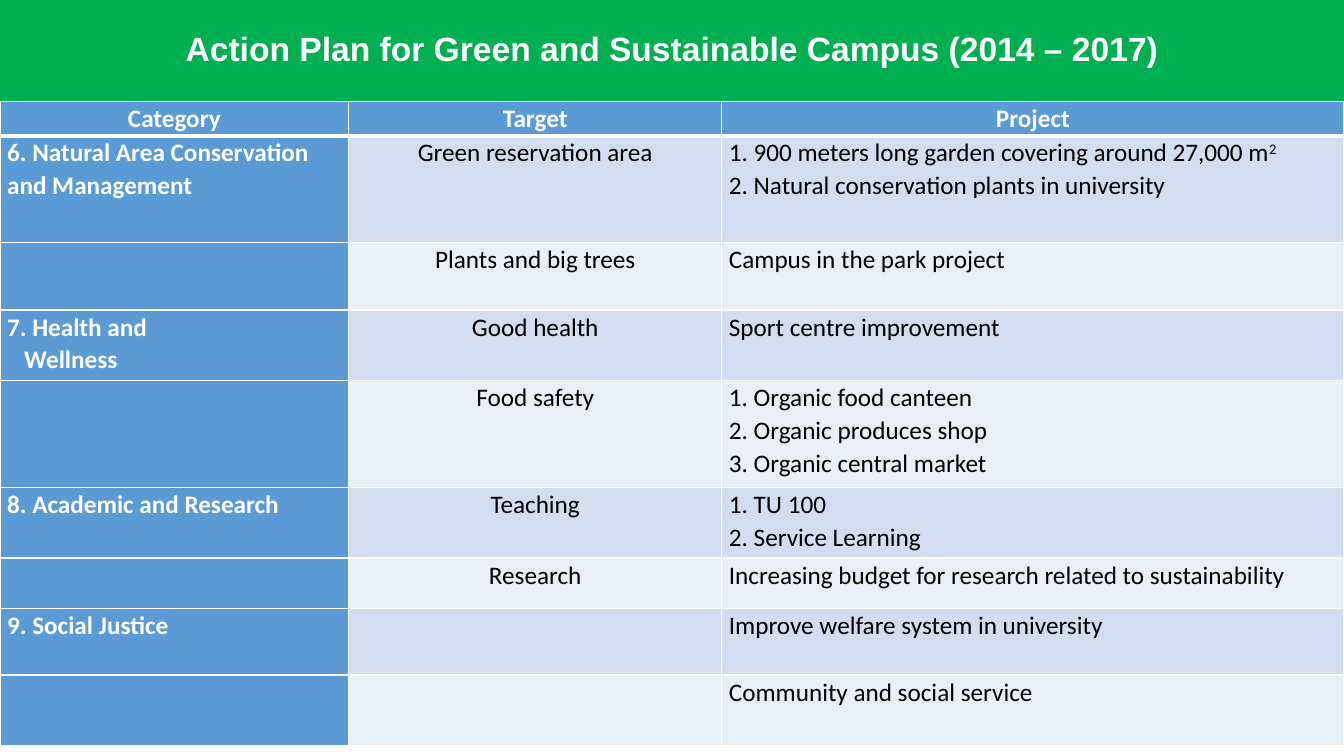
"""Build the action plan slide for a green and sustainable campus."""
import pptx
import pptx.dml.color
import pptx.enum.shapes
import pptx.enum.text
import pptx.oxml.ns
import pptx.util
from lxml import etree

Cm = pptx.util.Cm
Pt = pptx.util.Pt
RGBColor = pptx.dml.color.RGBColor
PP_ALIGN = pptx.enum.text.PP_ALIGN
qn = pptx.oxml.ns.qn

GREEN = RGBColor(0x00, 0xB0, 0x50)
BLUE = RGBColor(0x5B, 0x9B, 0xD5)
BAND_DARK = RGBColor(0xD2, 0xDE, 0xEF)
BAND_LIGHT = RGBColor(0xEA, 0xEF, 0xF7)
WHITE = RGBColor(0xFF, 0xFF, 0xFF)
BLACK = RGBColor(0x00, 0x00, 0x00)

WIDTH, HEIGHT, TITLE_HEIGHT = 33.87, 19.05, 2.56
COLUMNS = [8.79, 9.4, 15.68]
ROW_HEIGHTS = [0.86, 2.69, 1.7, 1.78, 2.69, 1.78, 1.27, 1.68, 1.78]
ROWS = [
    ["Category", "Target", "Project"],
    ["6. Natural Area Conservation and Management", "Green reservation area",
     "1. 900 meters long garden covering around 27,000 m^2\n"
     "2. Natural conservation plants in university"],
    ["", "Plants and big trees", "Campus in the park project"],
    ["7. Health and\n\tWellness", "Good health", "Sport centre improvement"],
    ["", "Food safety",
     "1. Organic food canteen\n2. Organic produces shop\n3. Organic central market"],
    ["8. Academic and Research", "Teaching", "1. TU 100\n2. Service Learning"],
    ["", "Research", "Increasing budget for research related to sustainability"],
    ["9. Social Justice", "", "Improve welfare system in university"],
    ["", "", "Community and social service"],
]


class Deck:
    """Hold the text style and the current slide."""

    title_font = {"name": "Arial", "size": Pt(24), "bold": True}
    cell_font = {"name": "Calibri", "size": Pt(18)}
    cell_margins = {"margin_left": Cm(0.18), "margin_right": Cm(0.18),
                    "margin_top": 0, "margin_bottom": 0}
    indent = Cm(0.43)

    def __init__(self):
        self.prs = pptx.Presentation()
        self.prs.slide_width, self.prs.slide_height = Cm(WIDTH), Cm(HEIGHT)
        self.s = self.prs.slides.add_slide(self.prs.slide_layouts[6])

    def add_text(self, tf, text, font, color, align, spacing):
        """Add lines; a tab indents a line and ^ starts a superscript."""
        for i, line in enumerate(text.split("\n")):
            p = tf.add_paragraph() if i else tf.paragraphs[0]
            p.alignment, p.line_spacing = align, spacing
            if line.startswith("\t"):
                p._p.get_or_add_pPr().set("marL", str(self.indent))
            for j, part in enumerate(line.strip().split("^")):
                r = p.add_run()
                r.text = part
                for key, value in font.items():
                    setattr(r.font, key, value)
                r.font.color.rgb = color
                if j:
                    r._r.get_or_add_rPr().set("baseline", "30000")

    def banner(self, text):
        """Add the title band across the top."""
        sp = self.s.shapes.add_shape(
            pptx.enum.shapes.MSO_SHAPE.RECTANGLE, 0, 0, Cm(WIDTH), Cm(TITLE_HEIGHT))
        sp.shadow.inherit = False
        sp.fill.solid()
        sp.fill.fore_color.rgb = GREEN
        sp.line.fill.background()
        tf = sp.text_frame
        tf.word_wrap = True
        tf.vertical_anchor = pptx.enum.text.MSO_ANCHOR.MIDDLE
        self.add_text(tf, text, self.title_font, WHITE, PP_ALIGN.CENTER, 0.9)

    def border(self, cell, widths):
        """Draw white cell edges of the given widths in points."""
        tcPr = cell._tc.get_or_add_tcPr()
        for side, width in widths.items():
            ln = etree.SubElement(tcPr, qn("a:ln" + side), w=str(Pt(width)))
            fill = etree.SubElement(ln, qn("a:solidFill"))
            etree.SubElement(fill, qn("a:srgbClr"), val=str(WHITE))

    def table(self, rows, columns, heights):
        """Add the plan with a header row, a header column and banded rows."""
        table = self.s.shapes.add_table(
            len(rows), len(columns), 0, Cm(TITLE_HEIGHT),
            Cm(WIDTH), Cm(sum(heights))).table
        for column, width in zip(table.columns, columns):
            column.width = Cm(width)
        for i, (texts, height) in enumerate(zip(rows, heights)):
            table.rows[i].height = Cm(height)
            for j, text in enumerate(texts):
                cell = table.cell(i, j)
                heading = i == 0 or j == 0
                for key, value in self.cell_margins.items():
                    setattr(cell, key, value)
                self.border(cell, {"L": 1, "R": 1, "T": 3 if i == 1 else 1,
                                   "B": 3 if i == 0 else 1})
                cell.fill.solid()
                band = BAND_DARK if i % 2 else BAND_LIGHT
                cell.fill.fore_color.rgb = BLUE if heading else band
                if text:
                    centred = i == 0 or j == 1
                    self.add_text(cell.text_frame, text,
                                  {**self.cell_font, "bold": heading},
                                  WHITE if heading else BLACK,
                                  PP_ALIGN.CENTER if centred else PP_ALIGN.LEFT, 1.07)


def main():
    deck = Deck()
    deck.banner("Action Plan for Green and Sustainable Campus (2014 – 2017)")
    deck.table(ROWS, COLUMNS, ROW_HEIGHTS)
    deck.prs.save("out.pptx")


if __name__ == "__main__":
    main()
